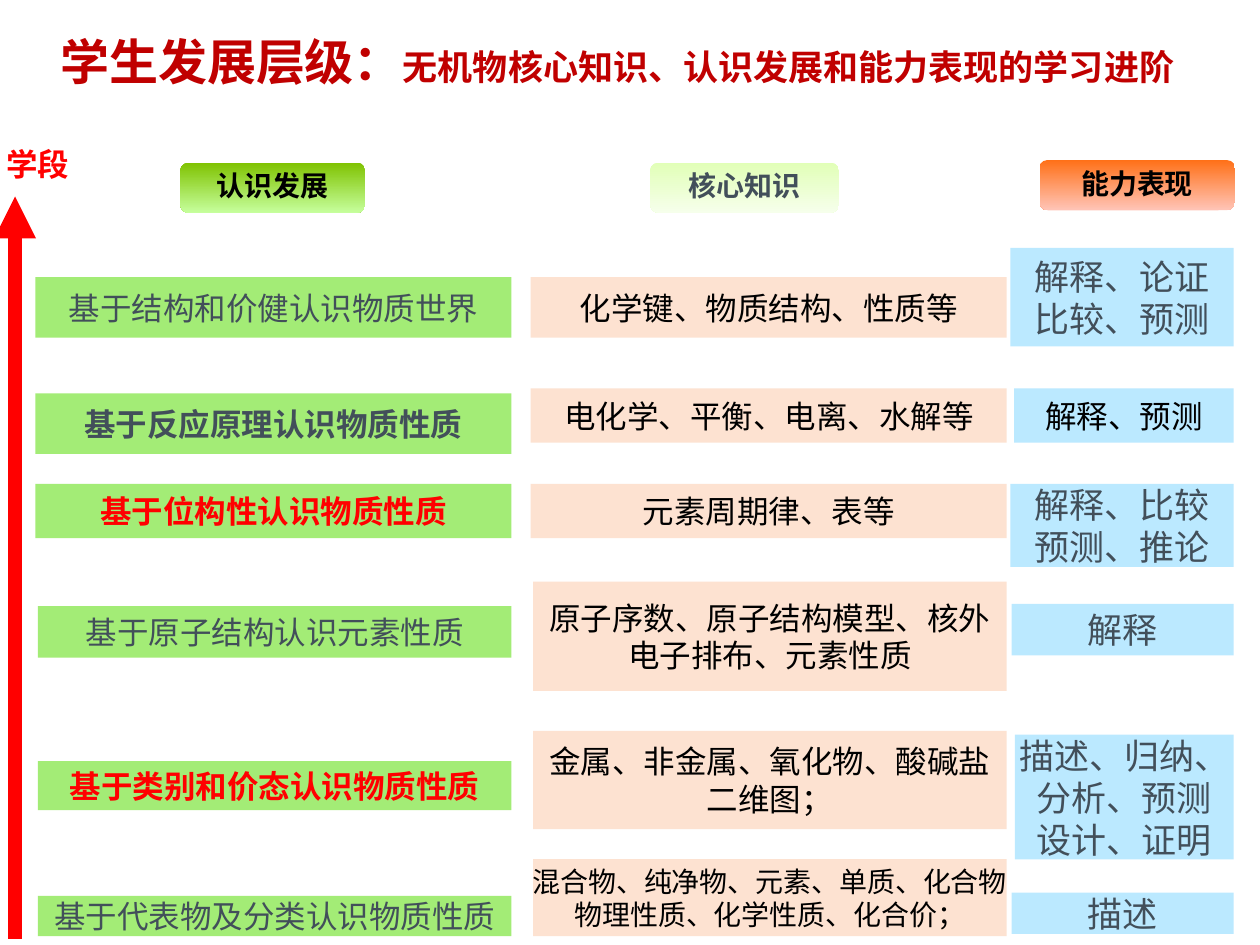
from lxml import etree
from pptx import Presentation
from pptx.dml.color import RGBColor
from pptx.enum.shapes import MSO_CONNECTOR, MSO_SHAPE
from pptx.enum.text import MSO_ANCHOR, PP_ALIGN
from pptx.oxml.ns import qn
from pptx.util import Pt

RECT, ROUNDED = MSO_SHAPE.RECTANGLE, MSO_SHAPE.ROUNDED_RECTANGLE
CENTER, LEFT = PP_ALIGN.CENTER, PP_ALIGN.LEFT
MIDDLE, TOP = MSO_ANCHOR.MIDDLE, MSO_ANCHOR.TOP
FONT, STAGE_FONT = "Noto Sans CJK SC", "Noto Sans CJK KR"
GREY, BLACK, RED, DARK_RED = "424F5A", "000000", "FF0000", "C00000"

# Content: title spans as (text, size)
TITLE = [("学生发展层级：", 28), ("无机物核心知识、认识发展和能力表现的学习进阶", 20)]

# Headers: text, (left, top, width, height), text colour, gradient colours
HEADERS = [
    ("认识发展", (103, 92.9, 105.8, 28.8), BLACK, ("7FC200", "C6FF9D")),
    ("核心知识", (371.5, 92.9, 108, 28.8), GREY, ("E1FFB7", "F6FFEB")),
    ("能力表现", (594, 91.4, 111.6, 28.8), BLACK, ("FF7017", "FFC4B7")),
]

# Columns: fill, right edge, cells of (text, left, top, height, size, colour, bold)
COLUMNS = [
    ("A3EC76", 292.3, [
        ("基于结构和价健认识物质世界", 20.2, 158.4, 34.6, 18, GREY, False),
        ("基于反应原理认识物质性质", 20.2, 224.8, 34.6, 18, GREY, True),
        ("基于位构性认识物质性质", 20.2, 276.5, 31, 18, RED, True),
        ("基于原子结构认识元素性质", 21.6, 346.3, 29.5, 18, GREY, False),
        ("基于类别和价态认识物质性质", 21.6, 434.9, 28.1, 18, RED, True),
        ("基于代表物及分类认识物质性质", 21.6, 511.9, 23, 18, GREY, False),
    ]),
    ("FDE2D1", 575.3, [
        ("化学键、物质结构、性质等", 303.3, 158.4, 34.6, 18, BLACK, False),
        ("电化学、平衡、电离、水解等", 303.3, 222, 31, 18, BLACK, False),
        ("元素周期律、表等", 303.3, 276.5, 31, 18, BLACK, False),
        ("原子序数、原子结构模型、核外\n电子排布、元素性质", 304.7, 332.4, 62.4, 18, BLACK, False),
        ("金属、非金属、氧化物、酸碱盐\n二维图；", 304.7, 417.6, 56.2, 18, BLACK, False),
        ("混合物、纯净物、元素、单质、化合物\n物理性质、化学性质、化合价；",
         304.7, 491, 43.9, 16, BLACK, False),
    ]),
    ("BBE9FF", 705, [
        ("解释、论证\n比较、预测", 577.4, 141.7, 56.2, 20, GREY, False),
        ("解释、预测", 579.5, 222, 31, 18, BLACK, False),
        ("解释、比较\n预测、推论", 577.4, 276.5, 47.5, 20, GREY, False),
        ("解释", 578.1, 345, 29.5, 20, GREY, False),
        ("描述、归纳、\n分析、预测\n设计、证明", 579.9, 419.8, 71.3, 20, GREY, False),
        ("描述", 578.1, 510, 23.6, 20, GREY, False),
    ]),
]


def rgb(value):
    return RGBColor.from_string(value)


def style_span(span, size, color, bold, font=FONT):
    span.font.size, span.font.bold, span.font.name = Pt(size), bold, font
    span.font.color.rgb = rgb(color)
    east_asian = etree.SubElement(span.font._element, qn("a:ea"))
    east_asian.set("typeface", font)


def write(box, text, size, color, bold, align=CENTER, anchor=MIDDLE, font=FONT):
    frame = box.text_frame
    frame.text = text
    frame.word_wrap = False
    frame.vertical_anchor = anchor
    for para in frame.paragraphs:
        para.alignment = align
        for span in para.runs:
            style_span(span, size, color, bold, font)


def add_box(page, kind, frame):
    box = page.shapes.add_shape(kind, *map(Pt, frame))
    box.shadow.inherit = False
    box.line.fill.background()
    return box


deck = Presentation()
deck.slide_width, deck.slide_height = Pt(720), Pt(540)
page = deck.slides.add_slide(deck.slide_layouts[6])

# Title
title = page.shapes.add_textbox(Pt(13.7), Pt(0), Pt(678.2), Pt(69.1))
title.text_frame.word_wrap = True
title.text_frame.vertical_anchor = MIDDLE
title_para = title.text_frame.paragraphs[0]
title_para.alignment = CENTER
for text, size in TITLE:
    span = title_para.add_run()
    span.text = text
    style_span(span, size, DARK_RED, True)

# Stage axis, pointing up
axis = page.shapes.add_connector(MSO_CONNECTOR.STRAIGHT, Pt(8.6), Pt(112.3), Pt(8.6), Pt(536.4))
axis.line.color.rgb = rgb(RED)
axis.line.width = Pt(8)
etree.SubElement(axis.line._get_or_add_ln(), qn("a:headEnd")).set("type", "triangle")
etree.SubElement(axis._element.spPr, qn("a:effectLst"))

stage = page.shapes.add_textbox(Pt(-3.6), Pt(79.2), Pt(51.1), Pt(28.8))
write(stage, "学段", 18, RED, True, LEFT, TOP, STAGE_FONT)

# Column cells
for fill, right, cells in COLUMNS:
    for text, left, top, height, size, color, bold in cells:
        cell = add_box(page, RECT, (left, top, right - left, height))
        cell.fill.solid()
        cell.fill.fore_color.rgb = rgb(fill)
        write(cell, text, size, color, bold)

# Column headers
for text, frame, color, gradient in HEADERS:
    header = add_box(page, ROUNDED, frame)
    header.fill.gradient()
    header.fill.gradient_angle = 270
    for stop, shade in zip(header.fill.gradient_stops, gradient):
        stop.color.rgb = rgb(shade)
    write(header, text, 16, color, True)
    header.text_frame.paragraphs[0].line_spacing = 0.9

deck.save("out.pptx")
